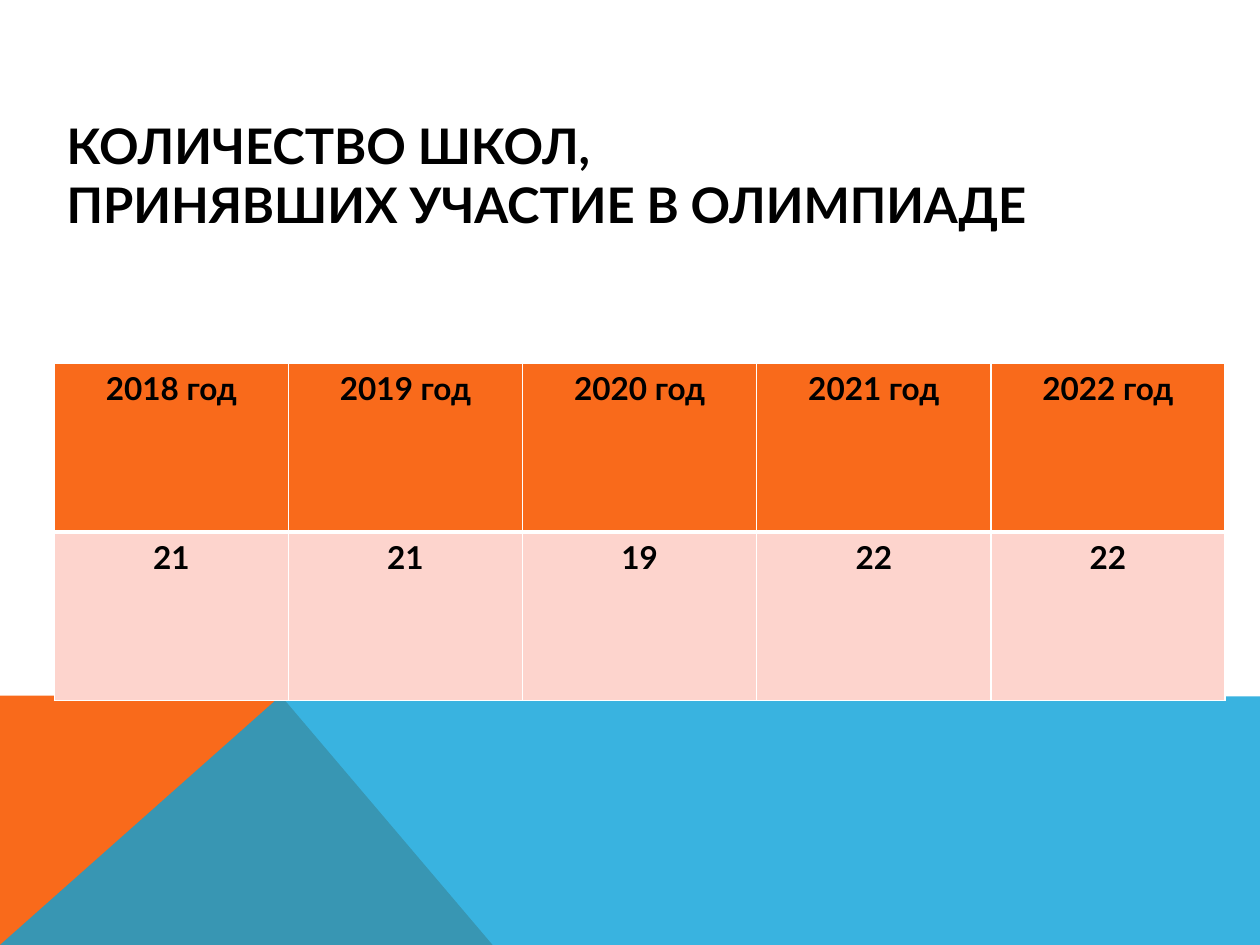
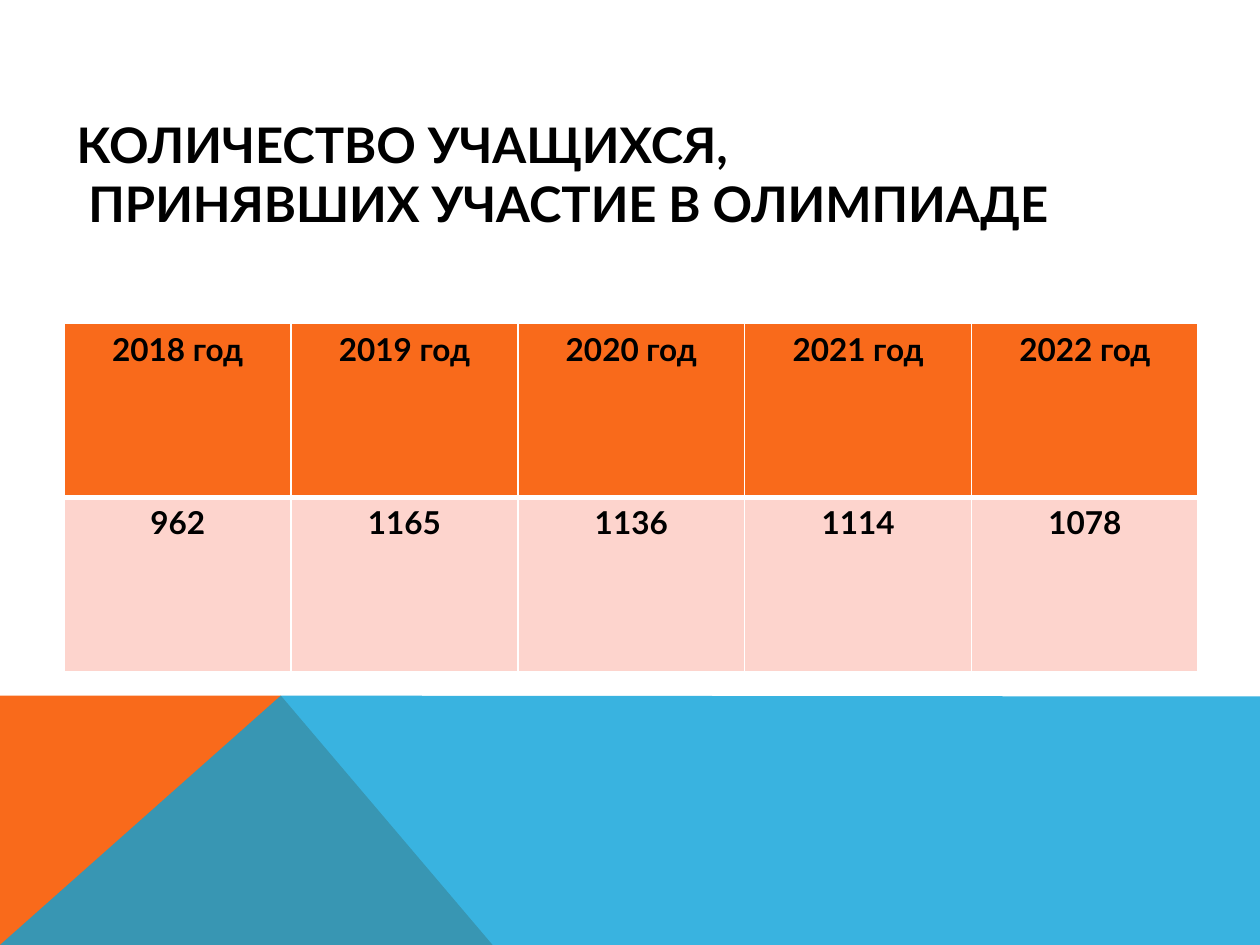
from dataclasses import dataclass

from pptx import Presentation
from pptx.dml.color import RGBColor
from pptx.enum import text
from pptx.oxml import ns, xmlchemy
from pptx.util import Pt

FONT = "Lato"
BLACK, WHITE = "000000", "FFFFFF"
ORANGE, BLUE, PINK = "F96A1B", "08A1D9", "FDD4CD"
WIDE, HIGH = 720, 540
YEARS = [f"{year} год" for year in range(2018, 2023)]


@dataclass
class Box:
    left: float
    top: float
    width: float
    height: float

    def lengths(self) -> list:
        return [Pt(n) for n in (self.left, self.top, self.width, self.height)]


@dataclass
class Band:
    points: list
    color: str
    alpha: int = 100


@dataclass
class Page:
    title: list
    head: Box
    grid: Box
    counts: list


BANDS = [
    Band([(0, HIGH), (0, 397.5), (160.5, 397.5), (281.5, HIGH)], ORANGE),
    Band([(0, HIGH), (160.5, 397.5), (WIDE, 398), (WIDE, HIGH)], BLUE, 80),
]

PAGES = [
    Page(["КОЛИЧЕСТВО ШКОЛ, ", "ПРИНЯВШИХ УЧАСТИЕ В ОЛИМПИАДЕ"],
         Box(31, 54.7, 648, 90), Box(31, 207.4, 669, 193),
         [21, 21, 19, 22, 22]),
    Page(["КОЛИЧЕСТВО УЧАЩИХСЯ,", " ПРИНЯВШИХ УЧАСТИЕ В ОЛИМПИАДЕ"],
         Box(36.7, 43.2, 648, 112.3), Box(36.7, 185, 648, 198.6),
         [962, 1165, 1136, 1114, 1078]),
]


def paint(fill, color: str) -> None:
    fill.solid()
    fill.fore_color.rgb = RGBColor.from_string(color)


def write(para, words: str, size: float) -> None:
    run = para.add_run()
    run.text = words
    run.font.name = FONT
    run.font.size = Pt(size)
    run.font.bold = True
    paint(run.font.fill, BLACK)


def draw_band(slide, band: Band) -> None:
    spots = [(Pt(x), Pt(y)) for x, y in band.points]
    path = slide.shapes.build_freeform(*spots[0])
    path.add_line_segments(spots[1:], close=True)
    shape = path.convert_to_shape()
    shape.shadow.inherit = False
    shape.line.fill.background()
    paint(shape.fill, band.color)
    if band.alpha < 100:
        tint = shape._element.spPr.find(ns.qn("a:solidFill"))[0]
        alpha = xmlchemy.OxmlElement("a:alpha")
        alpha.set("val", str(band.alpha * 1000))
        tint.append(alpha)


def draw_title(slide, page: Page) -> None:
    frame = slide.shapes.add_textbox(*page.head.lengths()).text_frame
    frame.word_wrap = True
    frame.vertical_anchor = text.MSO_ANCHOR.MIDDLE
    para = frame.paragraphs[0]
    for index, line in enumerate(page.title):
        if index:
            para.add_line_break()
        write(para, line, 28)


def edge(cell, top: float, bottom: float) -> None:
    props = cell._tc.get_or_add_tcPr()
    sides = {"L": 1, "R": 1, "T": top, "B": bottom}
    for index, (side, width) in enumerate(sides.items()):
        line = xmlchemy.OxmlElement(f"a:ln{side}")
        line.set("w", str(Pt(width)))
        fill = xmlchemy.OxmlElement("a:solidFill")
        color = xmlchemy.OxmlElement("a:srgbClr")
        color.set("val", WHITE)
        fill.append(color)
        line.append(fill)
        props.insert(index, line)


def draw_table(slide, page: Page) -> None:
    rows = [(YEARS, ORANGE, 1, 3), (page.counts, PINK, 3, 1)]
    frame = slide.shapes.add_table(
        len(rows), len(YEARS), *page.grid.lengths())
    table = frame.table
    table.first_row = table.horz_banding = False
    for row, (values, color, top, bottom) in enumerate(rows):
        for col, value in enumerate(values):
            cell = table.cell(row, col)
            paint(cell.fill, color)
            edge(cell, top, bottom)
            para = cell.text_frame.paragraphs[0]
            para.alignment = text.PP_ALIGN.CENTER
            write(para, str(value), 18)


def main() -> None:
    deck = Presentation()
    deck.slide_width, deck.slide_height = Pt(WIDE), Pt(HIGH)
    for page in PAGES:
        slide = deck.slides.add_slide(deck.slide_layouts[6])
        paint(slide.background.fill, WHITE)
        for band in BANDS:
            draw_band(slide, band)
        draw_title(slide, page)
        draw_table(slide, page)
    deck.save("out.pptx")


if __name__ == "__main__":
    main()
